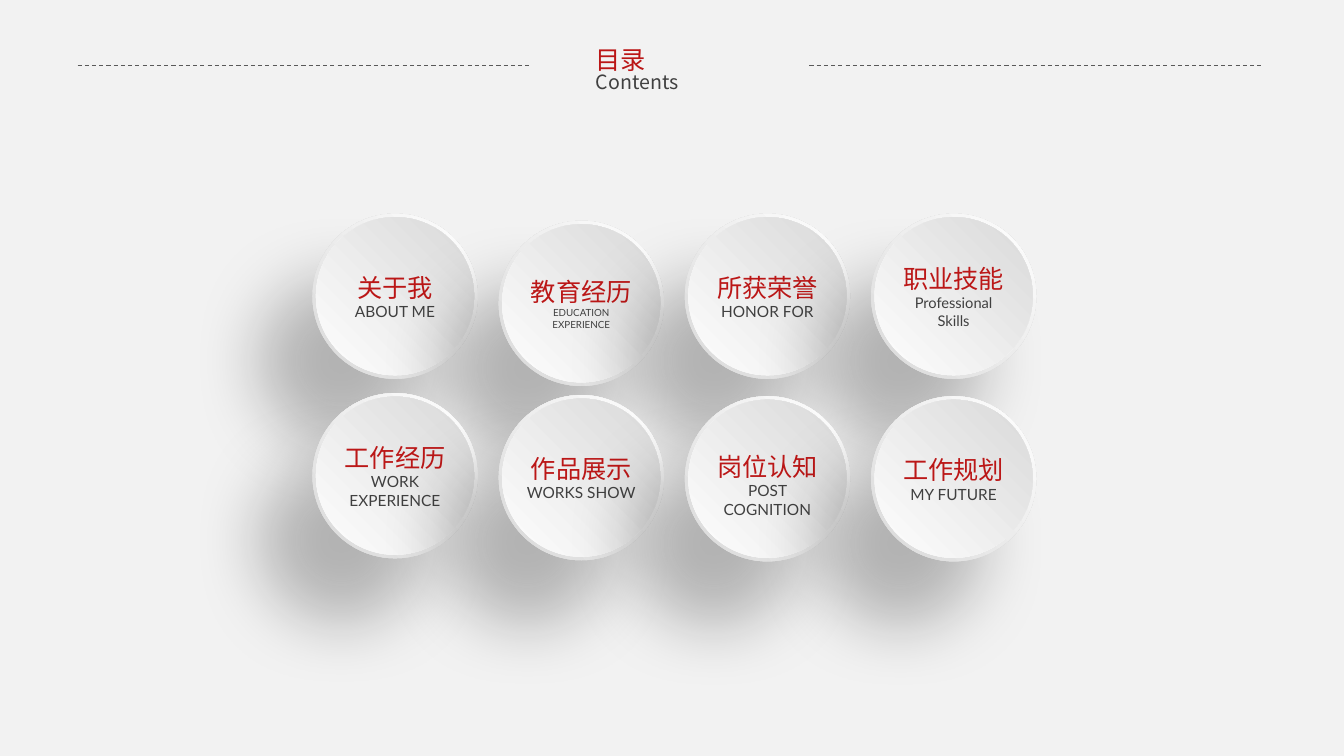
"""Build a contents slide: a heading between dashed rules and eight raised discs."""
import pptx
import pptx.dml.color
import pptx.enum.dml
import pptx.enum.shapes
import pptx.enum.text
import pptx.oxml
import pptx.oxml.ns
import pptx.util

Pt = pptx.util.Pt
COLORS = {
    "page": "F2F2F2",
    "heading": "BB1717",
    "english": "404040",
    "rule": "595959",
    "white": "FFFFFF",
    "grey": "D9D9D9",
    "glow": "FEFEFE",
    "shadow": "000000",
}
CHINESE_FONT = "Noto Sans CJK SC"
RIM, FACE = 118, 113
FIRST_LEFT, PITCH = 223.2, 133
COLUMNS = 4
TOPICS = [
    ("关于我", "ABOUT ME", 11, 152.6, False, 3.6),
    ("教育经历", "EDUCATION EXPERIENCE", 7, 157.7, True, 3.6),
    ("所获荣誉", "HONOR FOR", 11, 152.6, False, 3.6),
    ("职业技能", "Professional Skills", 10.5, 152.6, False, 3.6),
    ("工作经历", "WORK EXPERIENCE", 11, 280.8, False, 3.6),
    ("作品展示", "WORKS SHOW", 11, 282.2, True, 3.6),
    ("岗位认知", "POST COGNITION", 11, 283, True, 12),
    ("工作规划", "MY FUTURE", 11, 283, True, 3.6),
]


def rgb(name):
    """Return the named colour."""
    return pptx.dml.color.RGBColor.from_string(COLORS[name])


def add_run(paragraph, text, size, color, font):
    """Append one formatted run."""
    run = paragraph.add_run()
    run.text = text
    run.font.size = Pt(size)
    run.font.name = font
    run.font.color.rgb = rgb(color)
    east_asian = pptx.oxml.parse_xml(
        f'<a:ea {pptx.oxml.ns.nsdecls("a")} typeface="{CHINESE_FONT}"/>')
    run.font._element.find(pptx.oxml.ns.qn("a:latin")).addnext(east_asian)


def add_heading(slide):
    """Place the bilingual heading in the title placeholder."""
    heading = slide.shapes.title
    heading.left, heading.top = Pt(418.3), Pt(32.4)
    heading.width, heading.height = Pt(117.4), Pt(28.8)
    frame = heading.text_frame
    frame.word_wrap = False
    frame.auto_size = pptx.enum.text.MSO_AUTO_SIZE.NONE
    frame.vertical_anchor = pptx.enum.text.MSO_ANCHOR.TOP
    chinese, english = frame.paragraphs[0], frame.add_paragraph()
    add_run(chinese, "目录", 18, "heading", CHINESE_FONT)
    add_run(english, "Contents", 14, "english", CHINESE_FONT)
    for paragraph in (chinese, english):
        paragraph.alignment = pptx.enum.text.PP_ALIGN.LEFT
        paragraph.line_spacing = 0.8


def add_rule(slide, left):
    """Draw one dashed rule beside the heading."""
    rule = slide.shapes.add_connector(
        pptx.enum.shapes.MSO_CONNECTOR.STRAIGHT,
        Pt(left), Pt(46.8), Pt(left + 323.3), Pt(46.8))
    rule.line.color.rgb = rgb("rule")
    rule.line.width = Pt(0.75)
    rule.line.dash_style = pptx.enum.dml.MSO_LINE.DASH
    rule._element.spPr.append(
        pptx.oxml.parse_xml(f'<a:effectLst {pptx.oxml.ns.nsdecls("a")}/>'))


def add_circle(group, left, top, size, start, end):
    """Add a borderless circle whose gradient spreads from its top right."""
    circle = group.shapes.add_shape(
        pptx.enum.shapes.MSO_SHAPE.OVAL, Pt(left), Pt(top), Pt(size), Pt(size))
    circle.shadow.inherit = False
    circle.line.fill.background()
    gradient = pptx.oxml.parse_xml(
        f'<a:gradFill {pptx.oxml.ns.nsdecls("a")} rotWithShape="1"><a:gsLst>'
        f'<a:gs pos="0"><a:srgbClr val="{COLORS[start]}"/></a:gs>'
        f'<a:gs pos="100000"><a:srgbClr val="{COLORS[end]}"/></a:gs></a:gsLst>'
        '<a:path path="circle"><a:fillToRect l="100000" b="100000"/></a:path>'
        '</a:gradFill>')
    circle._element.spPr.find(pptx.oxml.ns.qn("a:ln")).addprevious(gradient)
    return circle


def cast_shadow(circle):
    """Give a circle a soft shadow towards the lower left."""
    shadow = pptx.oxml.parse_xml(
        f'<a:outerShdw {pptx.oxml.ns.nsdecls("a")} blurRad="{Pt(50)}" '
        f'dist="{Pt(60)}" dir="{130 * 60000}" algn="ctr" rotWithShape="0">'
        f'<a:srgbClr val="{COLORS["shadow"]}"><a:alpha val="25000"/></a:srgbClr>'
        '</a:outerShdw>')
    circle._element.spPr.find(pptx.oxml.ns.qn("a:effectLst")).append(shadow)


def add_topic(slide, left, topic):
    """Add one raised disc with its Chinese and English labels."""
    chinese, english, size, top, one_paragraph, top_margin = topic
    disc = slide.shapes.add_group_shape()
    cast_shadow(add_circle(disc, left, top, RIM, "white", "grey"))
    inset = (RIM - FACE) / 2
    face = add_circle(disc, left + inset, top + inset, FACE, "grey", "glow")
    frame = face.text_frame
    frame.word_wrap = True
    frame.vertical_anchor = pptx.enum.text.MSO_ANCHOR.MIDDLE
    frame.margin_left = frame.margin_right = 0
    frame.margin_top, frame.margin_bottom = Pt(top_margin), Pt(3.6)
    label = frame.paragraphs[0]
    add_run(label, chinese, 18, "heading", "Lato")
    if one_paragraph:
        label.add_line_break()
    else:
        label = frame.add_paragraph()
    add_run(label, english, size, "english", "Lato")
    for paragraph in frame.paragraphs:
        paragraph.alignment = pptx.enum.text.PP_ALIGN.CENTER


def main():
    """Build and save the slide."""
    deck = pptx.Presentation()
    deck.slide_width, deck.slide_height = Pt(960), Pt(540)
    slide = deck.slides.add_slide(deck.slide_layouts.get_by_name("Title Only"))
    slide.background.fill.solid()
    slide.background.fill.fore_color.rgb = rgb("page")
    add_heading(slide)
    for left in (55.4, 578.2):
        add_rule(slide, left)
    for index, topic in enumerate(TOPICS):
        add_topic(slide, FIRST_LEFT + PITCH * (index % COLUMNS), topic)
    deck.save("out.pptx")


if __name__ == "__main__":
    main()
